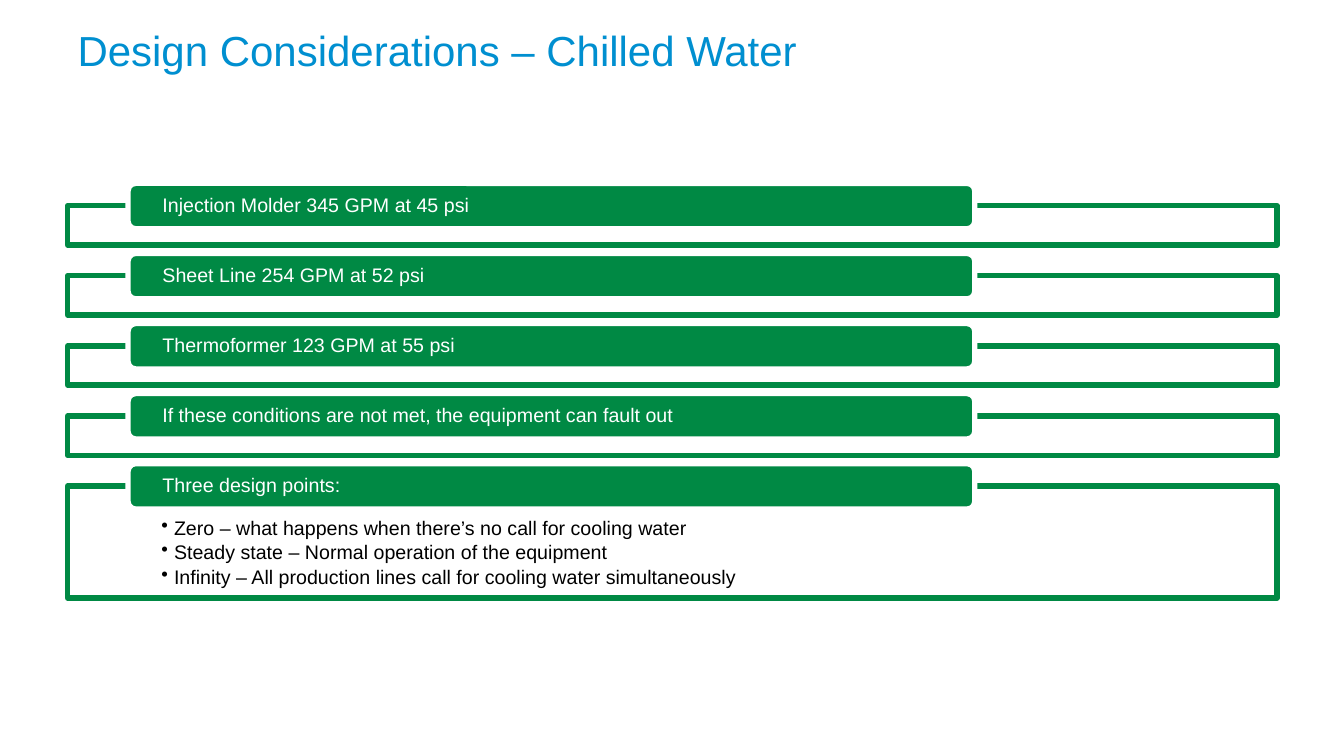
from dataclasses import dataclass

from lxml import etree
from pptx import Presentation
from pptx.dml.color import RGBColor
from pptx.enum.shapes import MSO_SHAPE
from pptx.enum.text import MSO_ANCHOR, PP_ALIGN
from pptx.oxml.ns import qn
from pptx.util import Pt

RECTANGLE = MSO_SHAPE.RECTANGLE
ROUNDED = MSO_SHAPE.ROUNDED_RECTANGLE
TOP, MIDDLE, BOTTOM = MSO_ANCHOR.TOP, MSO_ANCHOR.MIDDLE, MSO_ANCHOR.BOTTOM
LEFT = PP_ALIGN.LEFT

FONT = "Arial"
BLUE, GREEN, WHITE, BLACK = "008FD0", "008944", "FFFFFF", "000000"
FIRST_PANEL_TOP = 147
PITCH = 50.05
TAB_RISE = 16
BULLET_INDENT = 9


@dataclass(frozen=True)
class Consideration:
    heading: str
    height: float = 28
    points: tuple[str, ...] = ()


CONSIDERATIONS = (
    Consideration("Injection Molder 345 GPM at 45 psi"),
    Consideration("Sheet Line 254 GPM at 52 psi"),
    Consideration("Thermoformer 123 GPM at 55 psi"),
    Consideration("If these conditions are not met, the equipment can fault out"),
    Consideration(
        "Three design points:",
        80,
        (
            "Zero – what happens when there’s no call for cooling water",
            "Steady state – Normal operation of the equipment",
            "Infinity – All production lines call for cooling water simultaneously",
        ),
    ),
)


def rgb(value: str) -> RGBColor:
    return RGBColor.from_string(value)


def set_frame(frame, anchor, side: float, top: float, bottom: float) -> None:
    frame.word_wrap = True
    frame.vertical_anchor = anchor
    frame.margin_left = frame.margin_right = Pt(side)
    frame.margin_top, frame.margin_bottom = Pt(top), Pt(bottom)


def set_font(paragraph, size: float, color: str) -> None:
    paragraph.alignment = LEFT
    paragraph.font.name = FONT
    paragraph.font.size = Pt(size)
    paragraph.font.color.rgb = rgb(color)


def add_box(slide, kind, left: float, top: float, width: float, height: float,
            fill: str, line: str):
    box = slide.shapes.add_shape(kind, Pt(left), Pt(top), Pt(width), Pt(height))
    box.shadow.inherit = False
    box.fill.solid()
    box.fill.fore_color.rgb = rgb(fill)
    box.line.color.rgb = rgb(line)
    box.line.width = Pt(3.78)
    return box


def add_bullet(paragraph) -> None:
    properties = paragraph._p.get_or_add_pPr()
    properties.set("marL", str(Pt(BULLET_INDENT)))
    properties.set("indent", str(-Pt(BULLET_INDENT)))
    etree.SubElement(properties, qn("a:buChar")).set("char", "•")


def add_points(frame, points: tuple[str, ...]) -> None:
    set_frame(frame, TOP, 67, 23, 8)
    for index, point in enumerate(points):
        paragraph = frame.add_paragraph() if index else frame.paragraphs[0]
        paragraph.text = point
        add_bullet(paragraph)
        paragraph.line_spacing = 0.9
        paragraph.space_after = Pt(2.5)
        set_font(paragraph, 14, BLACK)


def add_consideration(slide, consideration: Consideration, top: float) -> None:
    panel = add_box(slide, RECTANGLE, 48.3, top, 864, consideration.height,
                    WHITE, GREEN)
    if consideration.points:
        add_points(panel.text_frame, consideration.points)
    tab = add_box(slide, ROUNDED, 91.5, top - TAB_RISE, 604.8, 32.4, GREEN, WHITE)
    set_frame(tab.text_frame, MIDDLE, 23, 0, 0)
    heading = tab.text_frame.paragraphs[0]
    heading.text = consideration.heading
    heading.line_spacing = 0.9
    set_font(heading, 14, WHITE)


def add_title(slide, text: str) -> None:
    title = slide.shapes.add_textbox(Pt(48.3), Pt(12.2), Pt(872), Pt(44.6))
    set_frame(title.text_frame, BOTTOM, 7.2, 3.6, 3.6)
    paragraph = title.text_frame.paragraphs[0]
    paragraph.text = text
    set_font(paragraph, 30, BLUE)


def main() -> None:
    presentation = Presentation()
    presentation.slide_width, presentation.slide_height = Pt(960), Pt(540)
    slide = presentation.slides.add_slide(presentation.slide_layouts[6])
    add_title(slide, "Design Considerations – Chilled Water")
    for row, consideration in enumerate(CONSIDERATIONS):
        add_consideration(slide, consideration, FIRST_PANEL_TOP + row * PITCH)
    presentation.save("out.pptx")


if __name__ == "__main__":
    main()
